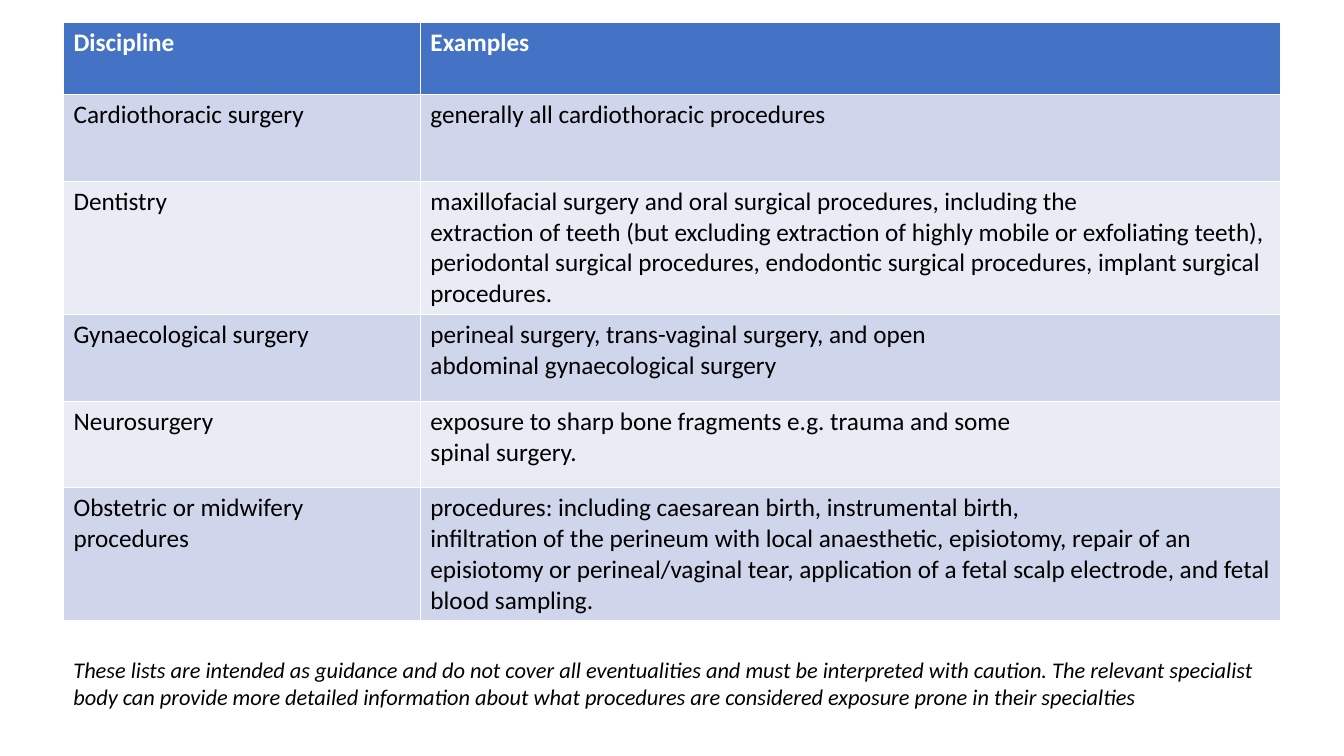
"""Build a slide listing exposure prone procedures by surgical discipline."""
from dataclasses import dataclass

import pptx
import pptx.dml.color
import pptx.enum.text
import pptx.slide
import pptx.text.text
import pptx.util
from pptx.util import Inches

FONT = "Calibri"
WHITE, BLACK = "FFFFFF", "000000"
HEADER_FILL = "4472C4"
BAND_FILLS = ("CFD5EA", "E9EBF5")
LEFT, WIDTH = 0.63, 12.07
COLUMN_WIDTHS = (3.54, 8.53)
HEADER_HEIGHT, ROW_HEIGHT = 0.72, 0.86


@dataclass(frozen=True)
class Discipline:
    name: str
    examples: str


DISCIPLINES = (
    Discipline("Cardiothoracic surgery", "generally all cardiothoracic procedures"),
    Discipline(
        "Dentistry",
        "maxillofacial surgery and oral surgical procedures, including the\n"
        "extraction of teeth (but excluding extraction of highly mobile or exfoliating teeth),\n"
        "periodontal surgical procedures, endodontic surgical procedures, implant surgical\n"
        "procedures.",
    ),
    Discipline(
        "Gynaecological surgery",
        "perineal surgery, trans-vaginal surgery, and open\nabdominal gynaecological surgery",
    ),
    Discipline(
        "Neurosurgery",
        "exposure to sharp bone fragments e.g. trauma and some\nspinal surgery.",
    ),
    Discipline(
        "Obstetric or midwifery procedures",
        "procedures: including caesarean birth, instrumental birth,\n"
        "infiltration of the perineum with local anaesthetic, episiotomy, repair of an "
        "episiotomy or perineal/vaginal tear, application of a fetal scalp electrode, "
        "and fetal blood sampling.",
    ),
)
CAUTION = (
    "These lists are intended as guidance and do not cover all eventualities and must be "
    "interpreted with caution. The relevant specialist body can provide more detailed "
    "information about what procedures are considered exposure prone in their specialties"
)


def color(value: str) -> pptx.dml.color.RGBColor:
    return pptx.dml.color.RGBColor.from_string(value)


def write_text(
    text_frame: pptx.text.text.TextFrame,
    text: str,
    size: int,
    text_color: str = BLACK,
    bold: bool = False,
    italic: bool = False,
) -> None:
    text_frame.text = text
    for paragraph in text_frame.paragraphs:
        for run in paragraph.runs:
            run.font.name = FONT
            run.font.size = pptx.util.Pt(size)
            run.font.bold = bold
            run.font.italic = italic
            run.font.color.rgb = color(text_color)


def add_discipline_table(slide: pptx.slide.Slide) -> None:
    rows = (Discipline("Discipline", "Examples"), *DISCIPLINES)
    height = HEADER_HEIGHT + ROW_HEIGHT * len(DISCIPLINES)
    table = slide.shapes.add_table(
        len(rows), len(COLUMN_WIDTHS),
        Inches(LEFT), Inches(0.22), Inches(WIDTH), Inches(height),
    ).table
    for column, width in zip(table.columns, COLUMN_WIDTHS):
        column.width = Inches(width)
    for index, discipline in enumerate(rows):
        is_header = index == 0
        table.rows[index].height = Inches(HEADER_HEIGHT if is_header else ROW_HEIGHT)
        fill = HEADER_FILL if is_header else BAND_FILLS[(index - 1) % 2]
        for cell, text in zip(table.rows[index].cells, (discipline.name, discipline.examples)):
            cell.fill.solid()
            cell.fill.fore_color.rgb = color(fill)
            write_text(cell.text_frame, text, 18, WHITE if is_header else BLACK, bold=is_header)


def add_caution(slide: pptx.slide.Slide) -> None:
    text_box = slide.shapes.add_textbox(Inches(LEFT), Inches(6.46), Inches(WIDTH), Inches(0.64))
    text_frame = text_box.text_frame
    text_frame.word_wrap = True
    text_frame.auto_size = pptx.enum.text.MSO_AUTO_SIZE.SHAPE_TO_FIT_TEXT
    write_text(text_frame, CAUTION, 16, italic=True)


def main() -> None:
    presentation = pptx.Presentation()
    presentation.slide_width = Inches(13.33)
    presentation.slide_height = Inches(7.5)
    slide = presentation.slides.add_slide(presentation.slide_layouts[6])
    add_discipline_table(slide)
    add_caution(slide)
    presentation.save("out.pptx")


if __name__ == "__main__":
    main()
